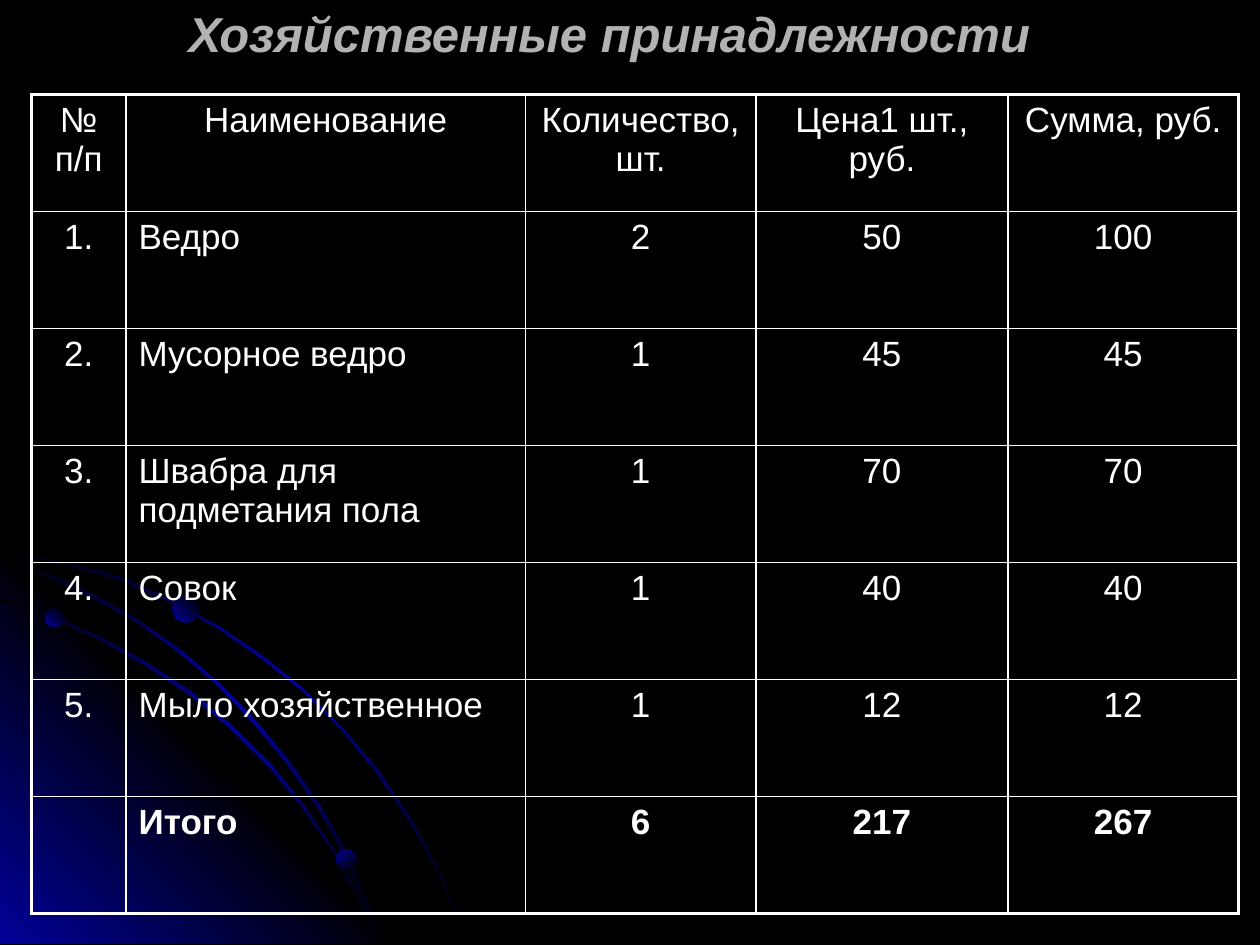
import copy

import lxml.etree
import pptx
import pptx.util
from pptx.dml.color import RGBColor
from pptx.enum.shapes import MSO_SHAPE
from pptx.enum.text import MSO_ANCHOR, PP_ALIGN
from pptx.oxml.ns import qn
from pptx.util import Inches, Pt

BLACK = RGBColor(0x00, 0x00, 0x00)
WHITE = RGBColor(0xFF, 0xFF, 0xFF)
GREY = RGBColor(0xB2, 0xB2, 0xB2)
BLUE = RGBColor(0x01, 0x01, 0x99)
FONT = "Arial"

# Content
HEADING = "Хозяйственные принадлежности"
GOODS = [
    ("№ п/п", "Наименование", "Количество, шт.", "Цена1 шт., руб.", "Сумма, руб."),
    ("1.", "Ведро", "2", "50", "100"),
    ("2.", "Мусорное ведро", "1", "45", "45"),
    ("3.", "Швабра для подметания пола", "1", "70", "70"),
    ("4.", "Совок", "1", "40", "40"),
    ("5.", "Мыло хозяйственное", "1", "12", "12"),
    ("", "Итого", "6", "217", "267"),
]
COLUMN_WIDTHS = [0.75, 3.17, 1.83, 2, 1.83]
TABLE_LEFT, TABLE_TOP, TABLE_HEIGHT = 0.25, 0.75, 6.5
NAME_COLUMN = 1
OUTER_LINE, INNER_LINE = 2.25, 1

# Background decoration: outlines in inches, gradient colours, clockwise angle
STREAK = (BLACK, BLUE, BLACK)
OUTER_ARC = [
    (0.57, 4.47), (0.28, 4.41), (0, 4.35), (0, 4.38), (0.28, 4.43), (0.56, 4.49),
    (0.97, 4.61), (1.35, 4.78), (1.73, 4.99), (2.08, 5.23), (2.41, 5.49),
    (2.71, 5.79), (2.98, 6.12), (3.23, 6.49), (3.37, 6.73), (3.5, 6.98),
    (3.6, 7.23), (3.7, 7.49), (3.72, 7.49), (3.62, 7.23), (3.52, 6.98),
    (3.39, 6.73), (3.25, 6.48), (3, 6.11), (2.72, 5.78), (2.42, 5.48),
    (2.09, 5.21), (1.74, 4.97), (1.36, 4.77), (0.98, 4.59),
]
CORNER_GLOW = [(3.22, 7.49), (0, 7.49), (0, 4.27)]
INNER_ARC = [
    (2.85, 7.14), (2.94, 7.32), (3.01, 7.49), (3.03, 7.49), (2.96, 7.3),
    (2.86, 7.12), (2.66, 6.76), (2.42, 6.4), (2.15, 6.06), (1.84, 5.76),
    (1.52, 5.49), (1.17, 5.26), (0.79, 5.05), (0.41, 4.88), (0, 4.75), (0, 4.77),
    (0.39, 4.9), (0.77, 5.07), (1.15, 5.28), (1.5, 5.51), (1.83, 5.78),
    (2.13, 6.08), (2.4, 6.41), (2.65, 6.77),
]
MIDDLE_ARC = [
    (0, 4.42), (0, 4.44), (0.36, 4.57), (0.74, 4.75), (1.09, 4.94), (1.42, 5.18),
    (1.73, 5.44), (2.02, 5.75), (2.27, 6.05), (2.52, 6.41), (2.67, 6.67),
    (2.8, 6.94), (2.92, 7.22), (3.01, 7.49), (3.03, 7.49), (2.94, 7.2),
    (2.82, 6.93), (2.69, 6.65), (2.54, 6.39), (2.29, 6.03), (2.04, 5.73),
    (1.75, 5.43), (1.44, 5.16), (1.11, 4.93), (0.76, 4.73), (0.39, 4.55),
]
OUTLINES = [
    (OUTER_ARC, STREAK, 45),
    (CORNER_GLOW, (BLUE, BLACK, BLUE), 315),
    (INNER_ARC, STREAK, 45),
    (MIDDLE_ARC, STREAK, 45),
]
BEADS = [(0.36, 4.83, 0.15, 315), (2.67, 6.74, 0.16, 45), (1.37, 4.73, 0.21, 315)]


def paint_gradient(shape, colors, angle):
    """Spread the colours evenly; the angle runs clockwise."""
    shape.shadow.inherit = False
    shape.line.fill.background()
    shape.fill.gradient()
    shape.fill.gradient_angle = 360 - angle
    stop_list = shape._element.spPr.find(".//" + qn("a:gsLst"))
    while len(stop_list) < len(colors):
        stop_list.append(copy.deepcopy(stop_list[0]))
    for i, (stop, color) in enumerate(zip(shape.fill.gradient_stops, colors)):
        stop.position = i / (len(colors) - 1)
        stop.color.rgb = color


def add_styled_run(paragraph, text, size, color, bold=False, italic=False):
    run = paragraph.add_run()
    run.text = text
    font = run.font
    font.name, font.size, font.bold, font.italic = FONT, Pt(size), bold, italic
    font.color.rgb = color


def add_border(cell, side, width):
    line = lxml.etree.SubElement(
        cell._tc.get_or_add_tcPr(), qn("a:" + side), w=str(Pt(width)))
    fill = lxml.etree.SubElement(line, qn("a:solidFill"))
    lxml.etree.SubElement(fill, qn("a:srgbClr"), val=str(WHITE))


deck = pptx.Presentation()
deck.slide_width, deck.slide_height = Inches(10), Inches(7.5)
slide = deck.slides.add_slide(deck.slide_layouts[5])
slide.background.fill.solid()
slide.background.fill.fore_color.rgb = BLACK

# Decoration
for points, colors, angle in OUTLINES:
    start, *rest = [(Inches(x), Inches(y)) for x, y in points]
    builder = slide.shapes.build_freeform(*start)
    builder.add_line_segments(rest, close=True)
    paint_gradient(builder.convert_to_shape(), colors, angle)

for left, top, size, angle in BEADS:
    bead = slide.shapes.add_shape(
        MSO_SHAPE.OVAL, Inches(left), Inches(top), Inches(size), Inches(size))
    paint_gradient(bead, (BLUE, BLACK), angle)

# Title
title = slide.shapes.title
title.left, title.top = Inches(0.75), Inches(0)
title.width, title.height = Inches(8.17), Inches(0.53)
title.text_frame.vertical_anchor = MSO_ANCHOR.MIDDLE
heading = title.text_frame.paragraphs[0]
heading.alignment = PP_ALIGN.CENTER
add_styled_run(heading, HEADING, 28, GREY, bold=True, italic=True)

# Table of goods
last_row, last_column = len(GOODS) - 1, len(COLUMN_WIDTHS) - 1
goods_table = slide.shapes.add_table(
    len(GOODS), len(COLUMN_WIDTHS), Inches(TABLE_LEFT), Inches(TABLE_TOP),
    Inches(sum(COLUMN_WIDTHS)), Inches(TABLE_HEIGHT)).table
goods_table.first_row = goods_table.horz_banding = False
for column, width in zip(goods_table.columns, COLUMN_WIDTHS):
    column.width = Inches(width)

for r, entries in enumerate(GOODS):
    for c, text in enumerate(entries):
        cell = goods_table.cell(r, c)
        on_edge = {"lnL": c == 0, "lnR": c == last_column,
                   "lnT": r == 0, "lnB": r == last_row}
        for side, outer in on_edge.items():
            add_border(cell, side, OUTER_LINE if outer else INNER_LINE)
        cell.fill.background()
        paragraph = cell.text_frame.paragraphs[0]
        is_name = c == NAME_COLUMN and r > 0
        paragraph.alignment = PP_ALIGN.LEFT if is_name else PP_ALIGN.CENTER
        paragraph.space_before = Pt(4)
        if text:
            add_styled_run(paragraph, text, 20, WHITE, bold=r == last_row)

deck.save("out.pptx")
